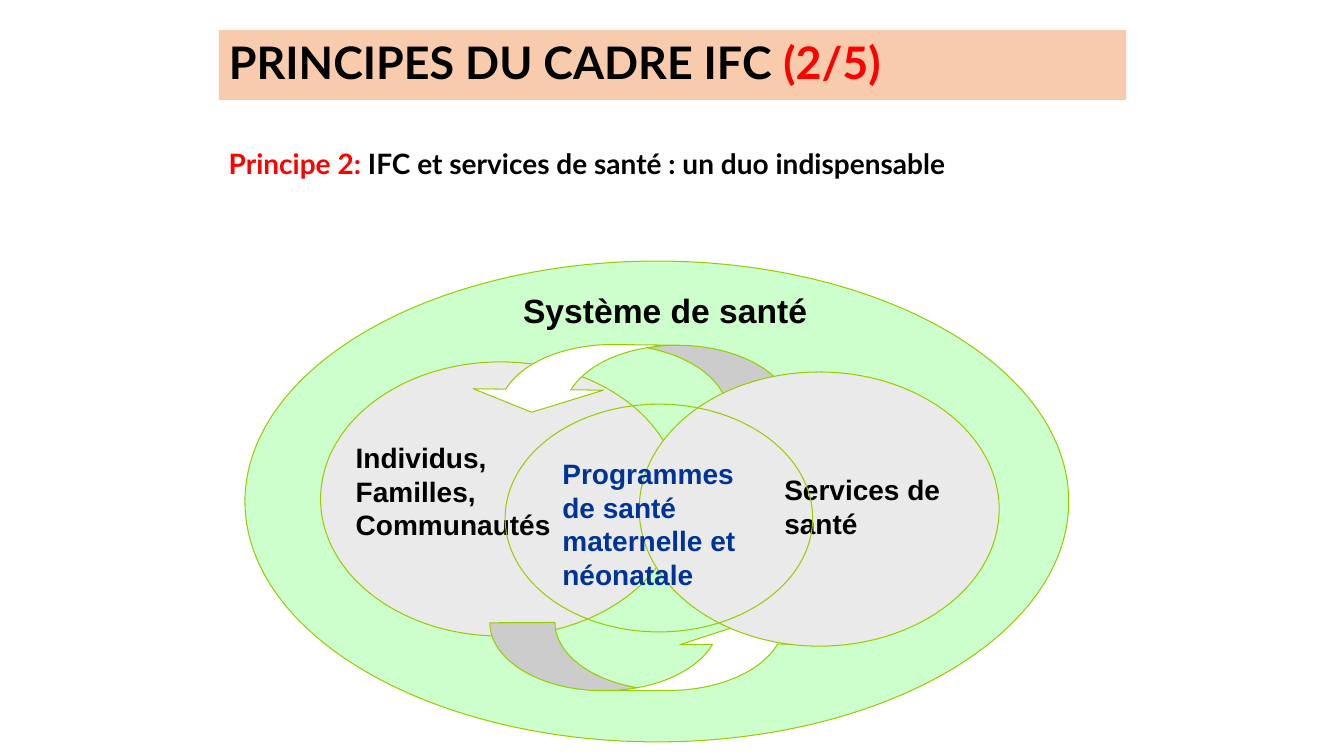
from pptx import Presentation
from pptx.dml.color import RGBColor
from pptx.enum.shapes import MSO_SHAPE as Shape
from pptx.enum.text import MSO_ANCHOR as Anchor, PP_ALIGN as Align
from pptx.util import Inches, Pt

COLORS = {
    "black": "000000", "red": "FF0000", "blue": "003399", "peach": "F8CBAD",
    "mint": "CCFFCC", "grey": "EAEAEA", "white": "FFFFFF", "green": "99CC00",
}
TITLE = [("PRINCIPES DU CADRE IFC ", "black"), ("(2/5)", "red")]
PRINCIPLE = [
    ("Principe 2: ", "red"),
    ("IFC et services de santé : un duo indispensable", "black"),
]
CIRCLE = (3.57, 2.72)
ARROW = (0.68, 3.24)
ARROW_BENDS = (0.95, 1.9, 0.333)
DIAGRAM = [
    ("ellipse", (2.43, 2.59, 8.17, 4.77), "mint"),
    ("ellipse", (3.18, 3.59, *CIRCLE), "grey"),
    ("label", (5.09, 2.83, 3.06, 0.68), "Système de santé", 24, "black"),
    ("arrow", (5.91, 2.14, *ARROW), 90.6),
    ("arrow", (6.14, 4.89, *ARROW), 269.7),
    ("ellipse", (6.34, 3.69, *CIRCLE), "grey"),
    ("label", (3.43, 4.32, 2.24, 1.19), "Individus, Familles, Communautés", 20, "black"),
    ("label", (7.68, 4.64, 1.78, 1.1), "Services de santé", 20, "black"),
    ("ellipse", (5.01, 4.01, 3.05, 2.26), None),
    ("label", (5.48, 4.48, 2.24, 1.19), "Programmes de santé maternelle et néonatale", 20, "blue"),
]


def color(name):
    return RGBColor.from_string(COLORS[name])


def inches(bounds):
    return [Inches(value) for value in bounds]


def write(box, spans, font, size, anchor=Anchor.TOP, spacing=1.0):
    frame = box.text_frame
    frame.word_wrap = True
    frame.vertical_anchor = anchor
    para = frame.paragraphs[0]
    para.alignment = Align.LEFT
    para.line_spacing = spacing
    for text, tint in spans:
        span = para.add_run()
        span.text = text
        span.font.name = font
        span.font.size = Pt(size)
        span.font.bold = True
        span.font.color.rgb = color(tint)


def add_outline(page, kind, bounds, fill):
    shape = page.shapes.add_shape(kind, *inches(bounds))
    shape.shadow.inherit = False
    if fill:
        shape.fill.solid()
        shape.fill.fore_color.rgb = color(fill)
    else:
        shape.fill.background()
    shape.line.color.rgb = color("green")
    shape.line.width = Pt(0.75)
    return shape


def add_arrow(page, bounds, rotation):
    arrow = add_outline(page, Shape.CURVED_RIGHT_ARROW, bounds, "white")
    arrow.rotation = rotation
    for index, bend in enumerate(ARROW_BENDS):
        arrow.adjustments[index] = bend


def add_label(page, bounds, text, size, tint):
    box = page.shapes.add_textbox(*inches(bounds))
    write(box, [(text, tint)], "Arial", size)


def add_ellipse(page, bounds, fill):
    add_outline(page, Shape.OVAL, bounds, fill)


def main():
    deck = Presentation()
    deck.slide_width, deck.slide_height = Inches(13.33), Inches(7.5)
    page = deck.slides.add_slide(deck.slide_layouts[5])

    title = page.shapes.title
    title.left, title.top, title.width, title.height = inches((2.17, 0.3, 9, 0.69))
    title.fill.solid()
    title.fill.fore_color.rgb = color("peach")
    write(title, TITLE, "Lato", 32, Anchor.MIDDLE, 0.9)

    principle = page.shapes.add_textbox(*inches((2.17, 1.23, 9, 0.71)))
    write(principle, PRINCIPLE, "Lato", 20, Anchor.MIDDLE, 1.2)

    builders = {"ellipse": add_ellipse, "arrow": add_arrow, "label": add_label}
    for kind, *details in DIAGRAM:
        builders[kind](page, *details)

    deck.save("out.pptx")


if __name__ == "__main__":
    main()
